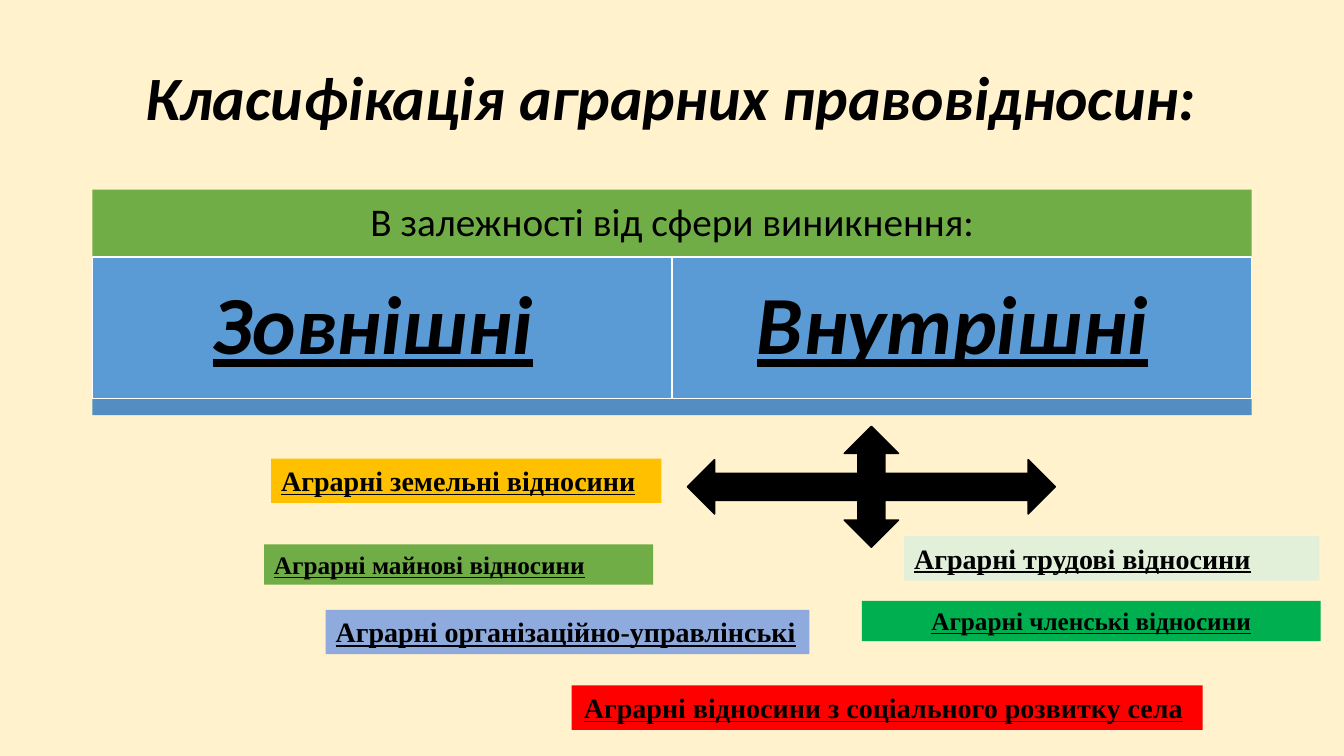
import pptx
import pptx.util
import pptx.dml.color
import pptx.enum.shapes
import pptx.enum.text

SHAPES = pptx.enum.shapes.MSO_SHAPE
ALIGN = pptx.enum.text.PP_ALIGN
ANCHOR = pptx.enum.text.MSO_ANCHOR
FIT = pptx.enum.text.MSO_AUTO_SIZE

INK = "000000"
GREEN = "70AD47"
BLUE = "5B9BD5"


def color(hex_code):
    return pptx.dml.color.RGBColor.from_string(hex_code)


def add_span(para, text, font="Calibri", size=20, bold=False, italic=False, underline=False):
    span = para.add_run()
    span.text = text
    span.font.name = font
    span.font.size = pptx.util.Pt(size)
    span.font.bold = bold
    span.font.italic = italic
    span.font.underline = underline
    span.font.color.rgb = color(INK)


class SlideBuilder:
    """Places elements by (left, top, width, height) in percent of the slide."""

    def __init__(self, deck, background):
        self.deck = deck
        self.page = deck.slides.add_slide(deck.slide_layouts[6])
        self.page.background.fill.solid()
        self.page.background.fill.fore_color.rgb = color(background)

    def place(self, area):
        sides = (self.deck.slide_width, self.deck.slide_height) * 2
        return [round(side * share / 100) for side, share in zip(sides, area)]

    def shape(self, area, fill, line=None, kind=SHAPES.RECTANGLE):
        box = self.page.shapes.add_shape(kind, *self.place(area))
        box.shadow.inherit = False
        box.fill.solid()
        box.fill.fore_color.rgb = color(fill)
        if line:
            box.line.color.rgb = color(line)
            box.line.width = pptx.util.Pt(1)
        else:
            box.line.fill.background()
        return box

    def fill_text(self, box, text, align=ALIGN.CENTER, inset=None, tail=False, tail_size=None,
                  **style):
        frame = box.text_frame
        frame.word_wrap = True
        frame.vertical_anchor = ANCHOR.MIDDLE
        if inset:
            frame.margin_left = frame.margin_right = pptx.util.Inches(inset)
            frame.margin_top = frame.margin_bottom = pptx.util.Inches(inset)
        para = frame.paragraphs[0]
        para.alignment = align
        para.line_spacing = 0.9
        add_span(para, text, **style)
        if tail:
            add_span(para, " ", style.get("font", "Calibri"), tail_size or style["size"],
                     bold=style["bold"] and not tail_size)
        return para

    def title(self, area, text):
        box = self.page.shapes.add_textbox(*self.place(area))
        self.fill_text(box, text, size=44, bold=True, italic=True)

    def panel(self, area, fill, text, line=None, **style):
        self.fill_text(self.shape(area, fill, line), text, **style)

    def label(self, area, fill, text, wrap=True, **style):
        box = self.shape(area, fill)
        para = self.fill_text(box, text, font="Times New Roman", bold=True, underline=True,
                              **style)
        para.line_spacing = 1.0
        box.text_frame.vertical_anchor = ANCHOR.TOP
        box.text_frame.word_wrap = wrap
        box.text_frame.auto_size = FIT.SHAPE_TO_FIT_TEXT


def main():
    deck = pptx.Presentation()
    deck.slide_width = pptx.util.Inches(13.33)
    deck.slide_height = pptx.util.Inches(7.5)
    builder = SlideBuilder(deck, "FFF2CC")

    # Title
    left, width = 6.88, 86.25
    builder.title((left, 5.33, width, 15.87), "Класифікація аграрних правовідносин:")

    # Two-part classification with a heading and a base strip
    builder.panel((left, 25.07, width, 8.93), GREEN, "В залежності від сфери виникнення:",
                  size=28, inset=0.12)
    half = width / 2
    for column, kind in enumerate(("Зовнішні", "Внутрішні")):
        builder.panel((left + column * half, 34, half, 18.8), BLUE, kind, line="FFFFFF",
                      size=59, inset=0.25, bold=True, italic=True, underline=True, tail=True)
    builder.shape((left, 52.8, width, 2.13), "538DC1")

    # Four-way arrow
    builder.shape((51.15, 56.4, 27.38, 16), INK, line=INK, kind=SHAPES.QUAD_ARROW)

    # Kinds of relations
    tall, low = 5.87, 5.33
    builder.label((20.18, 60.67, 29.03, tall), "FFC000", "Аграрні земельні відносини",
                  wrap=False, align=ALIGN.LEFT, size=20, tail=True, tail_size=18)
    builder.label((19.65, 72, 28.95, low), GREEN, "Аграрні майнові відносини",
                  align=ALIGN.LEFT, size=18)
    builder.label((67.28, 70.93, 30.9, tall), "E2F0D9", "Аграрні трудові відносини",
                  align=ALIGN.LEFT, size=20, tail=True)
    builder.label((24.23, 80.67, 36, tall), "8FAADC", "Аграрні організаційно-управлінські",
                  wrap=False, align=ALIGN.LEFT, size=20)
    builder.label((42.53, 90.67, 46.95, tall), "FF0000",
                  "Аграрні відносини з соціального розвитку села",
                  wrap=False, size=20, tail=True)
    builder.label((64.13, 79.47, 34.13, low), "00B050", "Аграрні членські відносини", size=18)

    deck.save("out.pptx")


if __name__ == "__main__":
    main()
